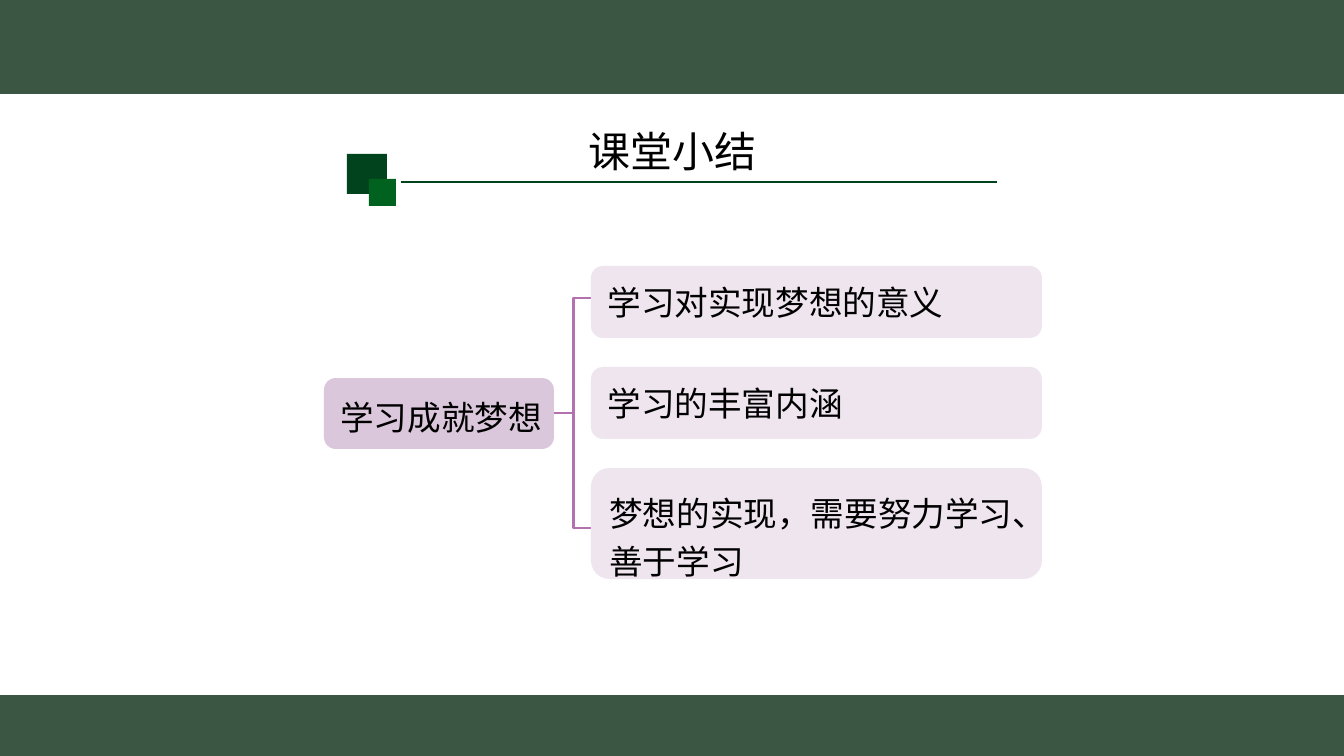
from pptx import Presentation
from pptx.dml.color import RGBColor
from pptx.enum.shapes import MSO_CONNECTOR, MSO_SHAPE
from pptx.enum.text import MSO_ANCHOR, PP_ALIGN
from pptx.oxml.ns import qn
from pptx.util import Pt

PX = 914400 / 100.8
FONT = "Noto Sans CJK SC"
BAND_GREEN = RGBColor(0x3B, 0x56, 0x43)
DARK_GREEN = RGBColor(0x01, 0x43, 0x1D)
LIGHT_GREEN = RGBColor(0x01, 0x62, 0x1F)
ROOT_PURPLE = RGBColor(0xDB, 0xC7, 0xDB)
BRANCH_PURPLE = RGBColor(0xEF, 0xE5, 0xEF)
BRACE_PURPLE = RGBColor(0xB3, 0x71, 0xAF)
BLACK = RGBColor(0, 0, 0)
RECTANGLE = MSO_SHAPE.RECTANGLE
ROUNDED = MSO_SHAPE.ROUNDED_RECTANGLE
LEFT, CENTER = PP_ALIGN.LEFT, PP_ALIGN.CENTER
TOP, MIDDLE, BOTTOM = MSO_ANCHOR.TOP, MSO_ANCHOR.MIDDLE, MSO_ANCHOR.BOTTOM


def px(*lengths):
    """Turn lengths in px into EMU."""
    return [round(length * PX) for length in lengths]


def write_text(shape, lines, size, alignment, anchor, spacing, insets):
    frame = shape.text_frame
    frame.word_wrap = True
    frame.vertical_anchor = anchor
    frame.margin_left, frame.margin_top, frame.margin_right, frame.margin_bottom = px(*insets)
    for index, line in enumerate(lines):
        paragraph = frame.add_paragraph() if index else frame.paragraphs[0]
        paragraph.alignment = alignment
        paragraph.line_spacing = spacing
        run = paragraph.add_run()
        run.text = line
        run.font.size = Pt(size)
        run.font.name = FONT
        run.font.color.rgb = BLACK
        east_asian = run.font._element.makeelement(qn("a:ea"), {"typeface": FONT})
        run.font._element.find(qn("a:latin")).addnext(east_asian)


presentation = Presentation()
presentation.slide_width, presentation.slide_height = px(1344, 756)
slide = presentation.slides.add_slide(presentation.slide_layouts[6])
shapes = slide.shapes

# Bands and title ornament
for box, color in (
    ((0, 0, 1344, 94), BAND_GREEN),
    ((0, 695, 1344, 61), BAND_GREEN),
    ((347, 154, 40, 40), DARK_GREEN),
    ((369, 179, 27, 27), LIGHT_GREEN),
):
    block = shapes.add_shape(RECTANGLE, *px(*box))
    block.shadow.inherit = False
    block.fill.solid()
    block.fill.fore_color.rgb = color
    block.line.fill.background()

title_line = shapes.add_connector(MSO_CONNECTOR.STRAIGHT, *px(401, 182, 997, 182))
title_line.line.color.rgb = DARK_GREEN
title_line.line.width = Pt(1)
properties = title_line._element.spPr
properties.append(properties.makeelement(qn("a:effectLst"), {}))

title = shapes.add_textbox(*px(220, 126, 905, 63))
write_text(title, ["课堂小结"], 30, CENTER, TOP, 0.9, (10, 5, 10, 5))

# Mind map
brace = shapes.add_shape(MSO_SHAPE.LEFT_BRACE, *px(554, 298, 39, 230))
brace.adjustments[0] = 0
brace.adjustments[1] = 0.5
brace.shadow.inherit = False
brace.fill.background()
brace.line.color.rgb = BRACE_PURPLE
brace.line.width = Pt(1.75)

BRANCH_LEFT, BRANCH_TOP, BRANCH_WIDTH, BRANCH_PITCH = 591, 266, 451, 101
topics = [((324, 378, 230, 71), ROOT_PURPLE, ["学习成就梦想"], MIDDLE, 1.2)]
branches = (
    (72, ["学习对实现梦想的意义"], MIDDLE, 1),
    (72, ["学习的丰富内涵"], MIDDLE, 1),
    (111, ["梦想的实现，需要努力学习、", "善于学习"], TOP, 1.2),
)
for row, (height, lines, anchor, spacing) in enumerate(branches):
    box = (BRANCH_LEFT, BRANCH_TOP + row * BRANCH_PITCH, BRANCH_WIDTH, height)
    topics.append((box, BRANCH_PURPLE, lines, anchor, spacing))

for box, color, lines, anchor, spacing in topics:
    topic = shapes.add_shape(ROUNDED, *px(*box))
    topic.shadow.inherit = False
    topic.fill.solid()
    topic.fill.fore_color.rgb = color
    topic.line.fill.background()
    write_text(topic, lines, 24, LEFT, anchor, spacing, (13, 11, 0, 0) if anchor == TOP else (13, 0, 0, 0))

presentation.save("out.pptx")
